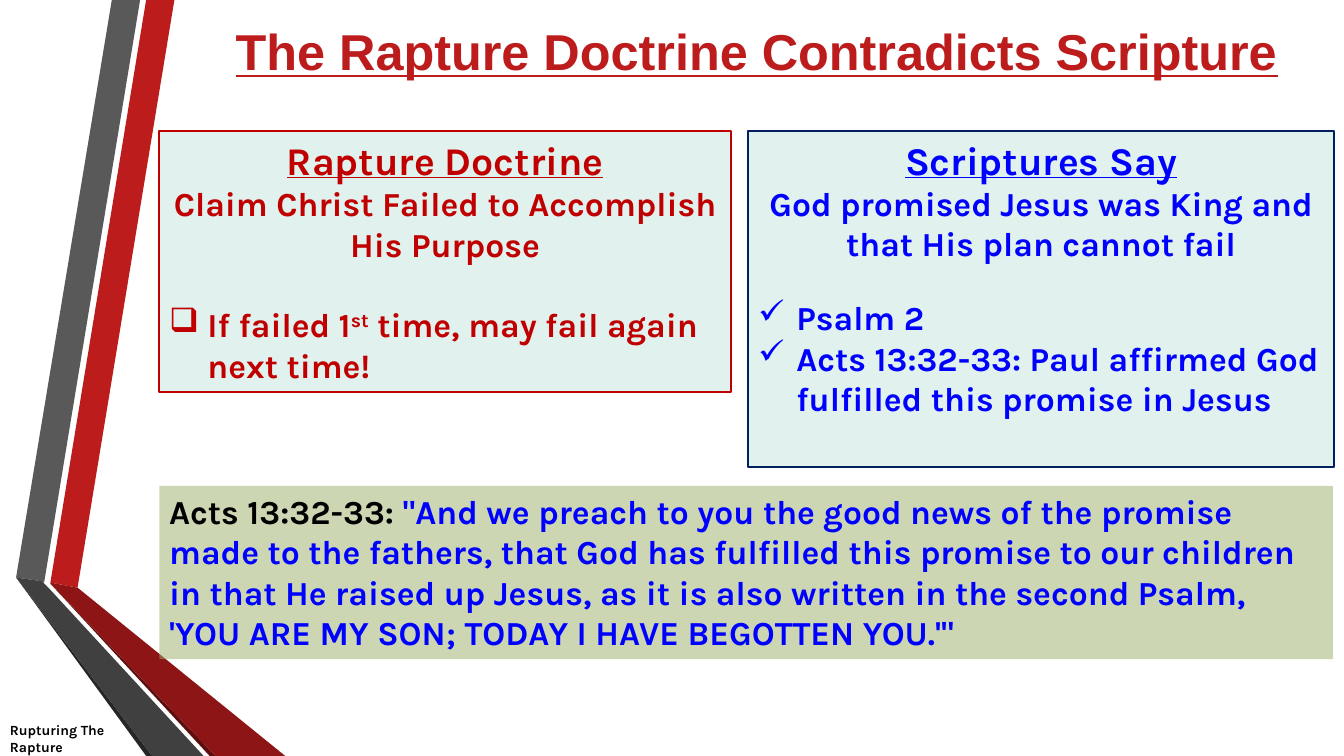
import dataclasses
import typing

import lxml.etree
import pptx
import pptx.dml.color
import pptx.enum.shapes
import pptx.enum.text
import pptx.oxml.ns
import pptx.util

Inches = pptx.util.Inches
Pt = pptx.util.Pt
Align = pptx.enum.text.PP_ALIGN
Anchor = pptx.enum.text.MSO_ANCHOR
qn = pptx.oxml.ns.qn

COLORS = {
    "red": "BC1C1C", "maroon": "8D1515", "wine": "5E0E0E",
    "gray": "595959", "dark": "404040", "shade": "262626",
    "claim": "C00000", "blue": "0000FF", "navy": "002060",
    "black": "000000", "mint": "E1F1ED", "olive": "9BAF68",
}


@dataclasses.dataclass
class Band:
    color: str
    points: list[tuple[float, float]]


@dataclasses.dataclass
class Run:
    text: str
    color: str
    size: float = 24
    line: bool = False
    lift: int = 0


@dataclasses.dataclass
class Para:
    runs: list[Run]
    center: bool = False
    bullet: str = ""
    gap: float = 0


@dataclasses.dataclass
class Panel:
    box: tuple[float, float, float, float]
    fill: str
    paras: list[Para]
    edge: str = ""
    alpha: int = 100


BANDS = [
    Band("red", [(0.5, 5.78), (0.77, 5.83), (1.73, 0), (1.45, 0)]),
    Band("gray", [(1.39, 0), (1.11, 0), (0.16, 5.73), (0.44, 5.77)]),
    Band("shade", [(0.16, 5.73), (1.45, 7.5), (1.51, 7.5)]),
    Band("wine", [(0.5, 5.79), (2.08, 7.5), (2.14, 7.5)]),
    Band("maroon", [(0.5, 5.79), (2.14, 7.5), (2.83, 7.5), (0.77, 5.83), (0.5, 5.78)]),
    Band("dark", [(2.02, 7.5), (0.48, 5.83), (0.43, 5.78), (0.44, 5.77),
                  (0.16, 5.73), (1.51, 7.5)]),
]

PANELS = [
    Panel((1.58, 1.3, 5.67, 2.59), "mint", edge="claim", paras=[
        Para([Run("Rapture Doctrine", "claim", 28, line=True)], center=True),
        Para([Run("Claim Christ Failed to Accomplish His Purpose", "claim")], center=True),
        Para([Run("If failed 1", "claim"), Run("st", "claim", lift=30000),
              Run(" time, may fail again next time!", "claim")], bullet="❑", gap=29),
    ]),
    Panel((7.42, 1.3, 5.81, 3.33), "mint", edge="navy", paras=[
        Para([Run("Scriptures Say", "blue", 28, line=True)], center=True),
        Para([Run("God promised Jesus was King and that His plan cannot fail", "blue")],
             center=True),
        Para([Run("Psalm 2", "blue")], bullet="✓", gap=24),
        Para([Run("Acts 13:32-33: Paul affirmed God fulfilled this promise in Jesus", "blue")],
             bullet="✓"),
    ]),
    Panel((1.58, 4.82, 11.64, 1.72), "olive", alpha=50, paras=[
        Para([Run("Acts 13:32-33: ", "black"),
              Run("\"And we preach to you the good news of the promise made to the fathers, "
                  "that God has fulfilled this promise to our children in that He raised up "
                  "Jesus, as it is also written in the second Psalm, 'YOU ARE MY SON; TODAY "
                  "I HAVE BEGOTTEN YOU.'\"", "blue")]),
    ]),
]


def tint(name: str) -> pptx.dml.color.RGBColor:
    return pptx.dml.color.RGBColor.from_string(COLORS[name])


def place(shape: typing.Any, box: tuple[float, float, float, float]) -> None:
    shape.left, shape.top, shape.width, shape.height = map(Inches, box)


def write(para: typing.Any, text: str, *, color: str, size: float = 24,
          font: str = "Karla", line: bool = False, lift: int = 0) -> None:
    run = para.add_run()
    run.text = text
    run.font.name = font
    run.font.size = Pt(size)
    run.font.bold = True
    run.font.underline = line
    run.font.color.rgb = tint(color)
    if lift:
        run.font._element.set("baseline", str(lift))


def mark(para: typing.Any, sign: str) -> None:
    """Give a paragraph a hanging bullet."""
    props = para._p.get_or_add_pPr()
    props.set("marL", str(Inches(0.38)))
    props.set("indent", str(Inches(-0.38)))
    lxml.etree.SubElement(props, qn("a:buChar")).set("char", sign)


def draw_band(slide: typing.Any, band: Band) -> None:
    first, *rest = [(Inches(x), Inches(y)) for x, y in band.points]
    pen = slide.shapes.build_freeform(*first)
    pen.add_line_segments(rest, close=True)
    shape = pen.convert_to_shape()
    shape.shadow.inherit = False
    shape.fill.solid()
    shape.fill.fore_color.rgb = tint(band.color)
    shape.line.fill.background()


def draw_panel(slide: typing.Any, panel: Panel) -> None:
    shape = slide.shapes.add_shape(pptx.enum.shapes.MSO_SHAPE.RECTANGLE,
                                   *map(Inches, panel.box))
    shape.shadow.inherit = False
    shape.fill.solid()
    shape.fill.fore_color.rgb = tint(panel.fill)
    if panel.alpha < 100:
        paint = shape.element.spPr.find(qn("a:solidFill"))[0]
        lxml.etree.SubElement(paint, qn("a:alpha")).set("val", str(panel.alpha * 1000))
    if panel.edge:
        shape.line.color.rgb = tint(panel.edge)
        shape.line.width = Pt(1.5)
    else:
        shape.line.fill.background()

    frame = shape.text_frame
    frame.word_wrap = True
    frame.vertical_anchor = Anchor.TOP
    for i, item in enumerate(panel.paras):
        para = frame.add_paragraph() if i else frame.paragraphs[0]
        para.alignment = Align.CENTER if item.center else Align.LEFT
        para.space_before = Pt(item.gap)
        if item.bullet:
            mark(para, item.bullet)
        for run in item.runs:
            write(para, run.text, color=run.color, size=run.size,
                  line=run.line, lift=run.lift)


def main() -> None:
    deck = pptx.Presentation()
    deck.slide_width, deck.slide_height = Inches(13.33), Inches(7.5)
    slide = deck.slides.add_slide(deck.slide_layouts[5])

    # Folded ribbons
    for band in BANDS:
        draw_band(slide, band)

    # Title
    title = slide.shapes.title
    place(title, (1.67, 0, 11.67, 1))
    title.text_frame.vertical_anchor = Anchor.MIDDLE
    head = title.text_frame.paragraphs[0]
    head.alignment = Align.CENTER
    write(head, "The Rapture Doctrine Contradicts Scripture", color="red",
          size=36, font="Arial", line=True)

    # Series name
    foot = slide.shapes.add_textbox(*map(Inches, (0, 7.15, 10, 0.35))).text_frame
    foot.word_wrap = True
    foot.vertical_anchor = Anchor.MIDDLE
    write(foot.paragraphs[0], "Rupturing The", color="black", size=10)
    write(foot.add_paragraph(), "Rapture", color="black", size=10)

    # Claim, answer and verse
    for panel in PANELS:
        draw_panel(slide, panel)

    deck.save("out.pptx")


if __name__ == "__main__":
    main()
